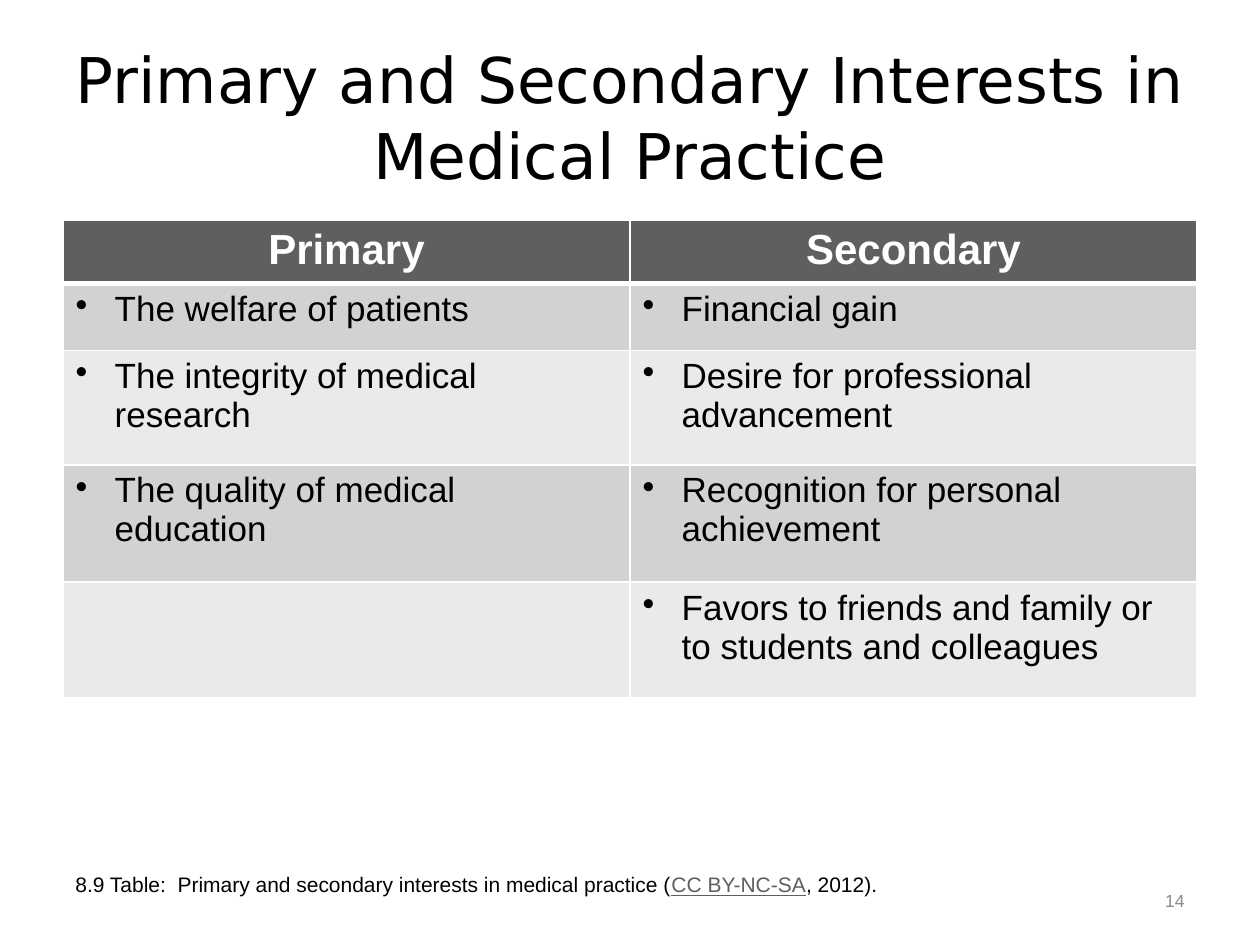
import pptx
import pptx.dml.color
import pptx.enum.text
import pptx.oxml
import pptx.oxml.ns
import pptx.util
from pptx.util import Inches

RGBColor = pptx.dml.color.RGBColor
ALIGN = pptx.enum.text.PP_ALIGN
ANCHOR = pptx.enum.text.MSO_ANCHOR

BLACK = RGBColor(0x00, 0x00, 0x00)
WHITE = RGBColor(0xFF, 0xFF, 0xFF)
DARK_GRAY = RGBColor(0x5F, 0x5F, 0x5F)
NUMBER_GRAY = RGBColor(0x89, 0x89, 0x89)
BANDS = (RGBColor(0xD2, 0xD2, 0xD2), RGBColor(0xEA, 0xEA, 0xEA))

# Content
TITLE = "Primary and Secondary Interests in Medical Practice"
HEADERS = ("Primary", "Secondary")
INTERESTS = [
    ("The welfare of patients", "Financial gain"),
    ("The integrity of medical research", "Desire for professional advancement"),
    ("The quality of medical education", "Recognition for personal achievement"),
    ("", "Favors to friends and family or to students and colleagues"),
]
CAPTION = [
    ("8.9 Table:  Primary and secondary interests in medical practice (", {}),
    ("CC BY-NC-SA", {"color": DARK_GRAY, "underline": True}),
    (", 2012).", {}),
]
SLIDE_NUMBER = "14"

# Layout, in inches
MARGIN, CONTENT_WIDTH = 0.5, 9
TABLE_TOP = 1.75
ROW_HEIGHTS = (0.5, 0.53, 0.91, 0.93, 0.92)
BULLET_INDENT = 0.31


def add_text(paragraph, text, size=20, font="Arial", color=BLACK, bold=False,
             underline=False, align=ALIGN.LEFT):
    paragraph.alignment = align
    run = paragraph.add_run()
    run.text = text
    run.font.name = font
    run.font.size = pptx.util.Pt(size)
    run.font.color.rgb = color
    run.font.bold = bold
    run.font.underline = underline


def add_box(slide, left, top, width, height, anchor):
    box = slide.shapes.add_textbox(*map(Inches, (left, top, width, height)))
    box.text_frame.word_wrap = True
    box.text_frame.vertical_anchor = anchor
    return box.text_frame.paragraphs[0]


def add_bullet(paragraph):
    properties = paragraph._p.get_or_add_pPr()
    indent = Inches(BULLET_INDENT)
    properties.set("marL", str(indent))
    properties.set("indent", str(-indent))
    properties.append(pptx.oxml.parse_xml(
        f'<a:buChar {pptx.oxml.ns.nsdecls("a")} char="•"/>'))


def set_borders(cell, **widths):
    """Draw white borders; the lines must come before the fill."""
    properties = cell._tc.get_or_add_tcPr()
    for position, side in enumerate("LRTB"):
        width = pptx.util.Pt(widths.get(side, 1))
        properties.insert(position, pptx.oxml.parse_xml(
            f'<a:ln{side} {pptx.oxml.ns.nsdecls("a")} w="{width}"><a:solidFill>'
            f'<a:srgbClr val="{WHITE}"/></a:solidFill></a:ln{side}>'))


def add_interests_table(slide):
    table = slide.shapes.add_table(
        len(ROW_HEIGHTS), len(HEADERS), Inches(MARGIN), Inches(TABLE_TOP),
        Inches(CONTENT_WIDTH), Inches(sum(ROW_HEIGHTS))).table
    for row, height in zip(table.rows, ROW_HEIGHTS):
        row.height = Inches(height)

    for row_index, texts in enumerate([HEADERS] + INTERESTS):
        for column_index, text in enumerate(texts):
            cell = table.cell(row_index, column_index)
            paragraph = cell.text_frame.paragraphs[0]
            cell.fill.solid()
            if row_index == 0:
                cell.fill.fore_color.rgb = DARK_GRAY
                add_text(paragraph, text, size=24, color=WHITE, bold=True,
                         align=ALIGN.CENTER)
                set_borders(cell, B=3)
                continue
            cell.fill.fore_color.rgb = BANDS[(row_index - 1) % 2]
            set_borders(cell, T=3 if row_index == 1 else 1)
            if text:
                add_text(paragraph, text)
                add_bullet(paragraph)


def main():
    presentation = pptx.Presentation()
    presentation.slide_width = Inches(10)
    presentation.slide_height = Inches(7.5)
    slide = presentation.slides.add_slide(presentation.slide_layouts[6])

    # Title
    title = add_box(slide, MARGIN, 0.3, CONTENT_WIDTH, 1.25, ANCHOR.MIDDLE)
    add_text(title, TITLE, size=36, font="DejaVu Sans", align=ALIGN.CENTER)

    add_interests_table(slide)

    # Caption and slide number
    caption = add_box(slide, MARGIN, 6.87, 8.35, 0.58, ANCHOR.TOP)
    caption.space_before = pptx.util.Pt(2.4)
    for text, style in CAPTION:
        add_text(caption, text, size=12, **style)
    number = add_box(slide, 8.94, 6.85, 0.56, 0.6, ANCHOR.MIDDLE)
    add_text(number, SLIDE_NUMBER, size=10, color=NUMBER_GRAY, align=ALIGN.RIGHT)

    presentation.save("out.pptx")


if __name__ == "__main__":
    main()
